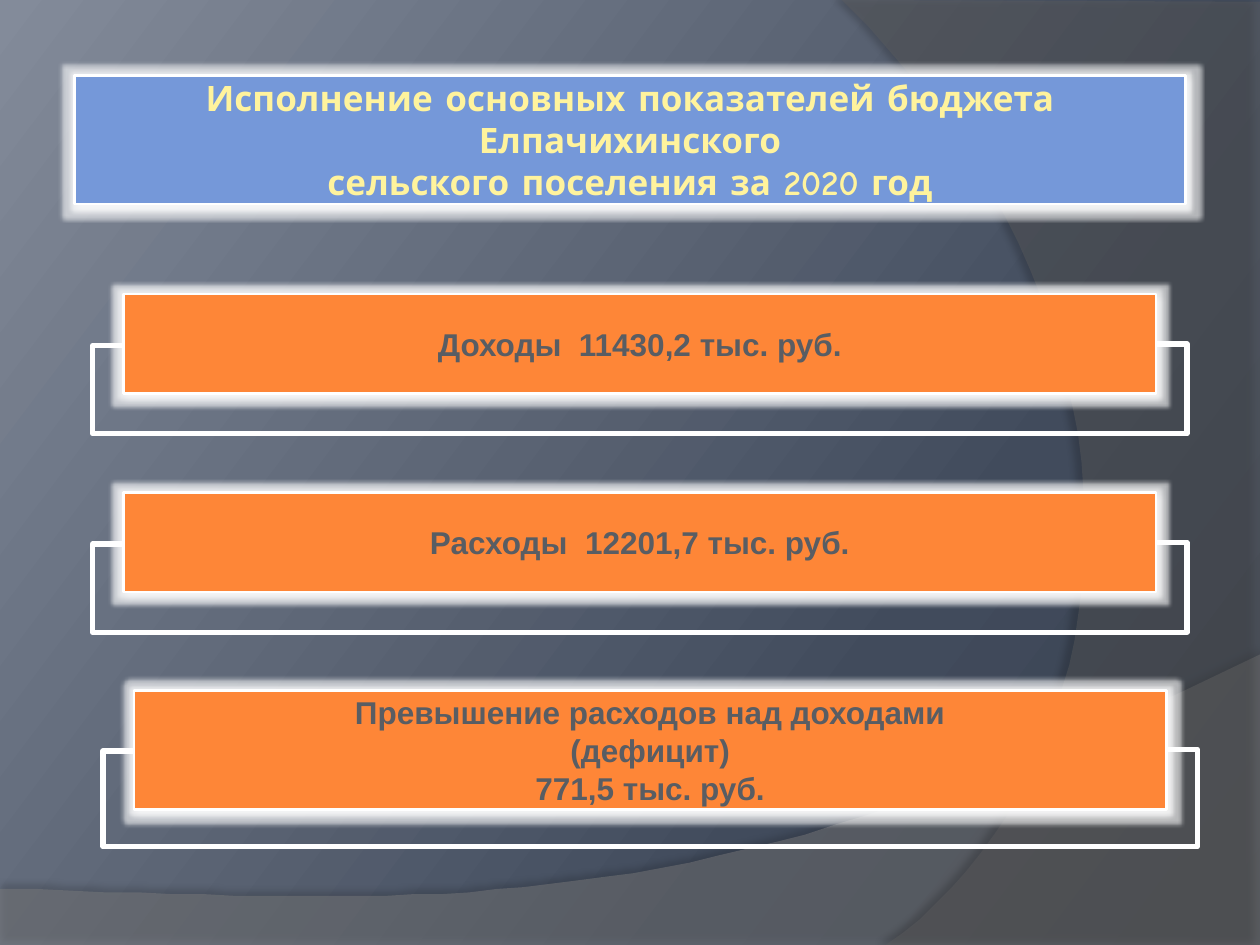
from lxml.etree import SubElement
from pptx import Presentation
from pptx.dml.color import RGBColor as Rgb
from pptx.enum.shapes import MSO_CONNECTOR as Conn, MSO_SHAPE as Shape
from pptx.enum.text import MSO_ANCHOR as Anchor, PP_ALIGN as Align
from pptx.oxml import parse_xml
from pptx.oxml.ns import nsdecls, qn
from pptx.util import Pt

COLORS = {
    "orange": "FE8637", "blue": "7598D9", "white": "FFFFFF", "black": "000000",
    "yellow": "FFF39D", "slate": "595D63", "gray": "7F7F7F", "dark": "5E5E5E",
    "bg_dark": "373F4D", "bg_mid": "414B5C", "bg_light": "838B9A",
}


def rgb(name):
    return Rgb.from_string(COLORS[name])


def add_color(parent, name, alpha=100):
    c = SubElement(parent, qn("a:srgbClr"), val=COLORS[name])
    if alpha < 100:
        SubElement(c, qn("a:alpha"), val=str(alpha * 1000))


def write(tf, text, font="Arial", size=18, color="slate", bold=True):
    tf.word_wrap = True
    tf.vertical_anchor = Anchor.MIDDLE
    for i, line in enumerate(text.split("\n")):
        p = tf.add_paragraph() if i else tf.paragraphs[0]
        p.alignment = Align.CENTER
        r = p.add_run()
        r.text = line
        r.font.name, r.font.size, r.font.bold = font, Pt(size), bold
        r.font.color.rgb = rgb(color)


def bezier(a, b, c, d, steps=40):
    for i in range(1, steps + 1):
        t = i / steps
        u = 1 - t
        yield tuple(u**3 * k + 3 * u * u * t * m + 3 * u * t * t * n + t**3 * q
                    for k, m, n, q in zip(a, b, c, d))


class Deck:
    """Holds the style and the current slide, and draws each kind of element."""

    def __init__(self, width, height):
        self.prs = Presentation()
        self.prs.slide_width, self.prs.slide_height = Pt(width), Pt(height)
        self.s = self.prs.slides.add_slide(self.prs.slide_layouts[6])

    def background(self, stops, angle):
        bg = parse_xml(f'<p:bg {nsdecls("p", "a")}><p:bgPr><a:gradFill rotWithShape="1">'
                       f'<a:gsLst/><a:lin ang="{angle * 60000}" scaled="0"/></a:gradFill>'
                       '<a:effectLst/></p:bgPr></p:bg>')
        gs_list = bg.find(".//" + qn("a:gsLst"))
        for pos, color in stops:
            add_color(SubElement(gs_list, qn("a:gs"), pos=str(pos * 1000)), color)
        self.s._element.cSld.insert(0, bg)

    def effects(self, sp, color, alpha, blur, dist, angle, glow=0):
        sp.shadow.inherit = False
        fx = sp._element.spPr.find(qn("a:effectLst"))
        if glow:
            add_color(SubElement(fx, qn("a:glow"), rad=str(Pt(glow))), color, alpha)
        shadow = SubElement(fx, qn("a:outerShdw"), blurRad=str(Pt(blur)), dist=str(Pt(dist)),
                            dir=str(angle * 60000), algn="ctr", rotWithShape="0")
        add_color(shadow, color, alpha)

    def wave(self, start, points, color, alpha, shadow_alpha, dist, angle):
        fb = self.s.shapes.build_freeform(*start, scale=Pt(1))
        fb.add_line_segments(points)
        sp = fb.convert_to_shape()
        sp.fill.solid()
        sp.fill.fore_color.rgb = rgb(color)
        clr = sp._element.spPr.find(qn("a:solidFill"))[0]
        SubElement(clr, qn("a:alpha"), val=str(alpha * 1000))
        sp.line.fill.background()
        self.effects(sp, "black", shadow_alpha, 4, dist, angle)

    def box(self, x, y, w, h, text, fill="orange", **fmt):
        sp = self.s.shapes.add_shape(Shape.RECTANGLE, Pt(x), Pt(y), Pt(w), Pt(h))
        sp.fill.solid()
        sp.fill.fore_color.rgb = rgb(fill)
        sp.line.color.rgb, sp.line.width = rgb("white"), Pt(1.5)
        self.effects(sp, "white", 60, 4, 2, 60, glow=5)
        write(sp.text_frame, text, **fmt)

    def bracket(self, x, y, w, drop):
        cx = self.s.shapes.add_connector(Conn.ELBOW, Pt(x + w), Pt(y), Pt(x), Pt(y + 1))
        cx.line.color.rgb, cx.line.width = rgb("white"), Pt(3)
        pr = cx._element.spPr
        pr.xfrm.set("rot", "10800000")
        geom = pr.find(qn("a:prstGeom"))
        geom.set("prst", "bentConnector5")
        guides = geom.find(qn("a:avLst"))
        if guides is None:
            guides = SubElement(geom, qn("a:avLst"))
        for i, adj in enumerate((-0.03, -drop, 1.03), 1):
            SubElement(guides, qn("a:gd"), name=f"adj{i}", fmla=f"val {round(adj * 100000)}")
        SubElement(pr, qn("a:effectLst"))


def main():
    deck = Deck(720, 540)
    deck.background([(0, "bg_dark"), (30, "bg_mid"), (100, "bg_light")], 217)
    corner = (720, 374.4)
    deck.wave((0, 540), [(720, 540), corner,
                         *bezier(corner, (402.5, 525), (281.5, 517.7), (0, 507.6))],
              "gray", 45, 35, 3.5, 270)
    foot = (506.2, 540)
    deck.wave((720, 1.4), [(720, 540), foot,
                           *bezier(foot, (641.5, 445.7), (681.8, 198), (481, 0))],
              "dark", 40, 45, 4, 180)
    deck.box(42.5, 43.2, 635, 73.5,
             "Исполнение основных показателей бюджета Елпачихинского\n"
             "сельского поселения за 2020 год",
             fill="blue", font="Comic Neue", size=20, color="yellow")
    cards = [
        (70.6, 168, 57, 29, 50.74, "Доходы  11430,2 тыс. руб."),
        (70.6, 281.4, 57, 29, 50.74, "Расходы  12201,7 тыс. руб."),
        (76.5, 394.6, 68, 34, 55.1,
         "Превышение расходов над доходами\n(дефицит)\n771,5 тыс. руб."),
    ]
    for x, y, h, mid, drop, text in cards:
        deck.box(x, y, 590, h, text)
        deck.bracket(x, y + mid - 0.5, 590, drop)
    deck.prs.save("out.pptx")


if __name__ == "__main__":
    main()
